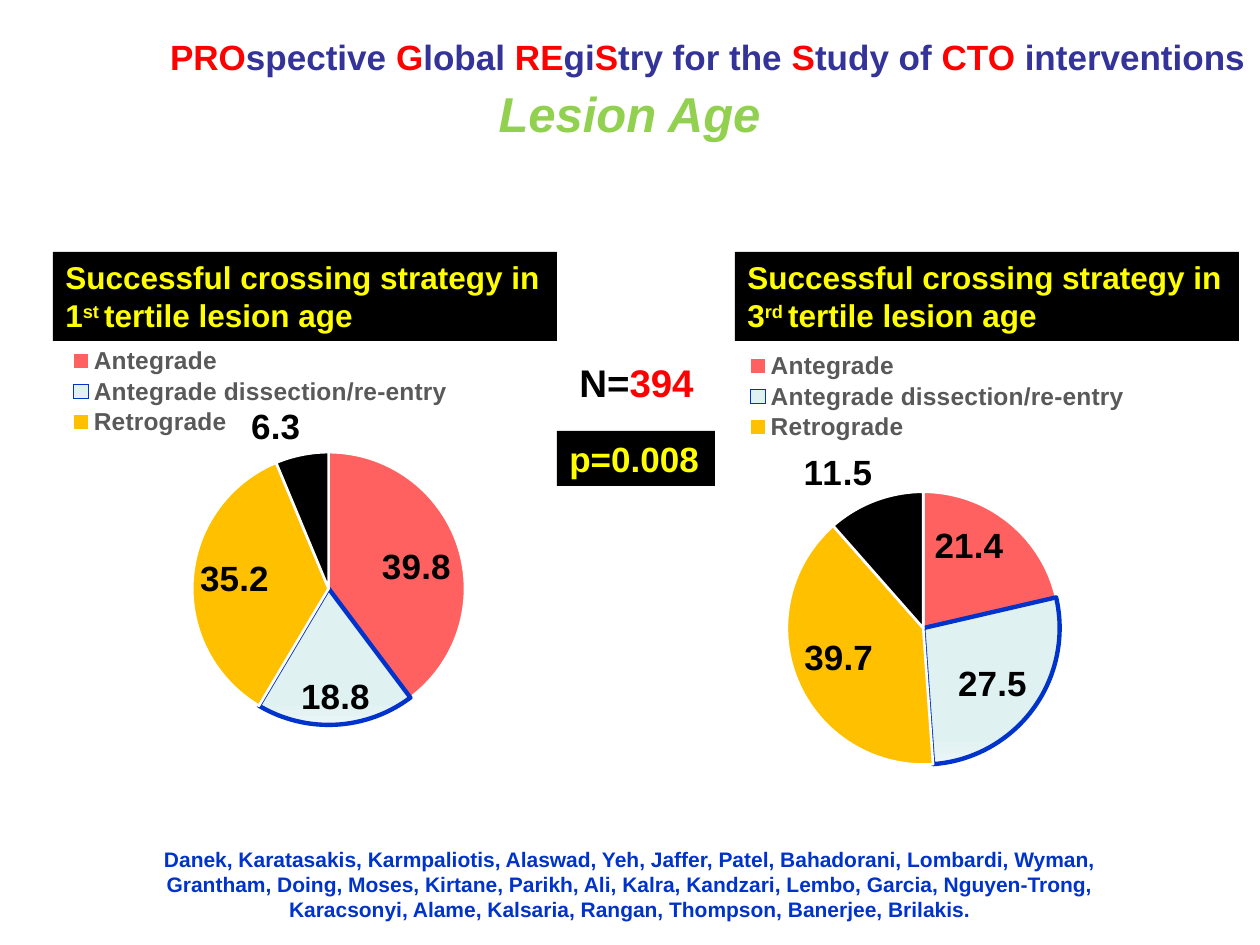
from dataclasses import dataclass
from itertools import cycle

from lxml import etree
from pptx import Presentation
from pptx.chart.data import CategoryChartData
from pptx.dml.color import RGBColor
from pptx.enum.chart import XL_CHART_TYPE, XL_LABEL_POSITION, XL_LEGEND_POSITION
from pptx.enum.shapes import MSO_SHAPE
from pptx.enum.text import MSO_ANCHOR, PP_ALIGN
from pptx.oxml import parse_xml
from pptx.oxml.ns import nsdecls, qn
from pptx.util import Emu, Pt

PIE = XL_CHART_TYPE.PIE
INSIDE, OUTSIDE = XL_LABEL_POSITION.INSIDE_END, XL_LABEL_POSITION.OUTSIDE_END
BOTTOM = XL_LEGEND_POSITION.BOTTOM
RECT = MSO_SHAPE.RECTANGLE
TOP, MIDDLE = MSO_ANCHOR.TOP, MSO_ANCHOR.MIDDLE
LEFT, CENTER = PP_ALIGN.LEFT, PP_ALIGN.CENTER


@dataclass(frozen=True)
class Theme:
    font: str = "Arial"
    black: str = "000000"
    white: str = "FFFFFF"
    red: str = "FF0000"
    navy: str = "333399"
    blue: str = "0033CC"
    green: str = "92D050"
    yellow: str = "FFFF00"
    gold: str = "FFC000"
    ice: str = "E0F1F2"
    frost: str = "EBF6F7"
    gray: str = "595959"
    title: int = 28
    count: int = 22
    large: int = 20
    head: int = 18
    legend: int = 14
    names: int = 12


T = Theme()
CATS = ["Antegrade", "Antegrade dissection/re-entry", "Retrograde", "None"]
BANNER = "PRO|spective |G|lobal |RE|gi|S|try for the |S|tudy of |CTO| interventions"
AUTHORS = (
    "Danek, Karatasakis, Karmpaliotis, Alaswad, Yeh, Jaffer, Patel, Bahadorani, "
    "Lombardi, Wyman, Grantham, Doing, Moses, Kirtane, Parikh, Ali, Kalra, Kandzari, "
    "Lembo, Garcia, Nguyen-Trong, Karacsonyi, Alame, Kalsaria, Rangan, Thompson, "
    "Banerjee, Brilakis."
)


def px(n):
    return Emu(round(n * 914400 / 126))


def rgb(code):
    return RGBColor.from_string(code)


def style(font, size, color, italic=None):
    font.name, font.size, font.bold, font.italic = T.font, Pt(size), True, italic
    font.color.rgb = rgb(color)


def write(shape, text, size, colors, align=LEFT, anchor=TOP, italic=None, raised=None):
    """Fill a shape; "|" splits runs, colors cycle over them, raised is the superscript run."""
    frame = shape.text_frame
    frame.word_wrap, frame.vertical_anchor = True, anchor
    para = frame.paragraphs[0]
    para.alignment = align
    for i, (part, color) in enumerate(zip(text.split("|"), cycle(colors))):
        run = para.add_run()
        run.text = part
        style(run.font, size, color, italic)
        if i == raised:
            run.font._element.set("baseline", "30000")


def note(slide, box, text, size, colors, **kw):
    write(slide.shapes.add_textbox(*map(px, box)), text, size, colors, **kw)


def label(slide, box, text, size, **kw):
    """Yellow text on a black bar."""
    bar = slide.shapes.add_shape(RECT, *map(px, box))
    bar.shadow.inherit = False
    bar.fill.solid()
    bar.fill.fore_color.rgb = rgb(T.black)
    bar.line.fill.background()
    write(bar, text, size, [T.yellow], **kw)


def layout(x, y, w, h, inner=False):
    target = '<c:layoutTarget val="inner"/>' if inner else ""
    sizes = "".join(f'<c:{k} val="{v}"/>' for k, v in zip("xywh", (x, y, w, h)))
    return parse_xml(
        f'<c:layout {nsdecls("c")}><c:manualLayout>{target}<c:xMode val="edge"/>'
        f'<c:yMode val="edge"/>{sizes}</c:manualLayout></c:layout>'
    )


def drop(parent, tag):
    for old in parent.findall(qn(tag)):
        parent.remove(old)


def paint(series):
    for i, color in enumerate((T.red, None, T.gold, T.black)):
        form = series.points[i].format
        if color:
            form.fill.solid()
            form.fill.fore_color.rgb = rgb(color)
        else:
            form.fill.gradient()
            form.fill.gradient_angle = 270
            for stop, at, tone in zip(form.fill.gradient_stops, (0.83, 1), (T.ice, T.frost)):
                stop.position, stop.color.rgb = at, rgb(tone)
        form.line.color.rgb = rgb(T.white if color else T.blue)
        form.line.width = Pt(1.5 if color else 2.5)
    for tint in series._element.iter(qn("a:srgbClr")):
        if tint.get("val") == T.red:
            etree.SubElement(tint, qn("a:alpha")).set("val", "62000")


def pie(slide, box, values, plot, key):
    """Pie chart; plot and key are the places of pie and legend as shares of the box."""
    data = CategoryChartData()
    data.categories = CATS
    data.add_series("Series 1", values)
    chart = slide.shapes.add_chart(PIE, *map(px, box), data).chart
    chart.has_title = False
    chart.font.name, chart.font.size = T.font, Pt(10)
    chart.plots[0].vary_by_categories = True

    series = chart.plots[0].series[0]
    paint(series)
    marks = series.data_labels
    marks.show_value, marks.position = True, INSIDE
    style(marks.font, T.large, T.black)
    last = series.points[3].data_label
    style(last.font, T.large, T.black)
    last.position = OUTSIDE

    chart.has_legend = True
    legend = chart.legend
    legend.position, legend.include_in_layout = BOTTOM, False
    style(legend.font, T.legend, T.gray)
    root = legend._element
    drop(root, "c:layout")
    root.insert(1, layout(*key))
    root.insert(1, parse_xml(
        f'<c:legendEntry {nsdecls("c")}><c:idx val="3"/><c:delete val="1"/></c:legendEntry>'
    ))
    area = chart._chartSpace.chart.plotArea
    drop(area, "c:layout")
    area.insert(0, layout(*plot, inner=True))


def header(slide):
    title = slide.shapes.title
    title.left, title.top, title.width, title.height = map(px, (199, 73, 861, 79))
    write(title, "Lesion Age", T.title, [T.green], align=CENTER, anchor=MIDDLE, italic=True)
    note(slide, (155, 20, 1105, 73), BANNER, T.large, [T.red, T.navy],
         align=CENTER, anchor=MIDDLE)


def center(slide, x, y):
    note(slide, (x + 10, y, 189, 59), "N=|394", T.count, [T.black, T.red])
    label(slide, (x, y + 78, 158, 55), "p=0.008", T.large)


def main():
    deck = Presentation()
    deck.slide_width, deck.slide_height = px(1260), px(945)
    slide = deck.slides.add_slide(deck.slide_layouts[5])
    header(slide)
    center(slide, 557, 353)
    for x, rank in ((53, "1|st "), (735, "3|rd ")):
        label(slide, (x, 252, 504, 89),
              f"Successful crossing strategy in {rank}|tertile lesion age", T.head, raised=1)
    pie(slide, (53, 305, 546, 433), (39.8, 18.8, 35.2, 6.3),
        plot=(0.04, 0.34, 0.93, 0.63), key=(0.02, 0.09, 0.72, 0.22))
    pie(slide, (620, 336, 567, 433), (21.4, 27.5, 39.7, 11.5),
        plot=(0.07, 0.36, 0.93, 0.63), key=(0.21, 0.03, 0.7, 0.22))
    note(slide, (105, 840, 1050, 89), AUTHORS, T.names, [T.blue], align=CENTER)
    deck.save("out.pptx")


if __name__ == "__main__":
    main()
